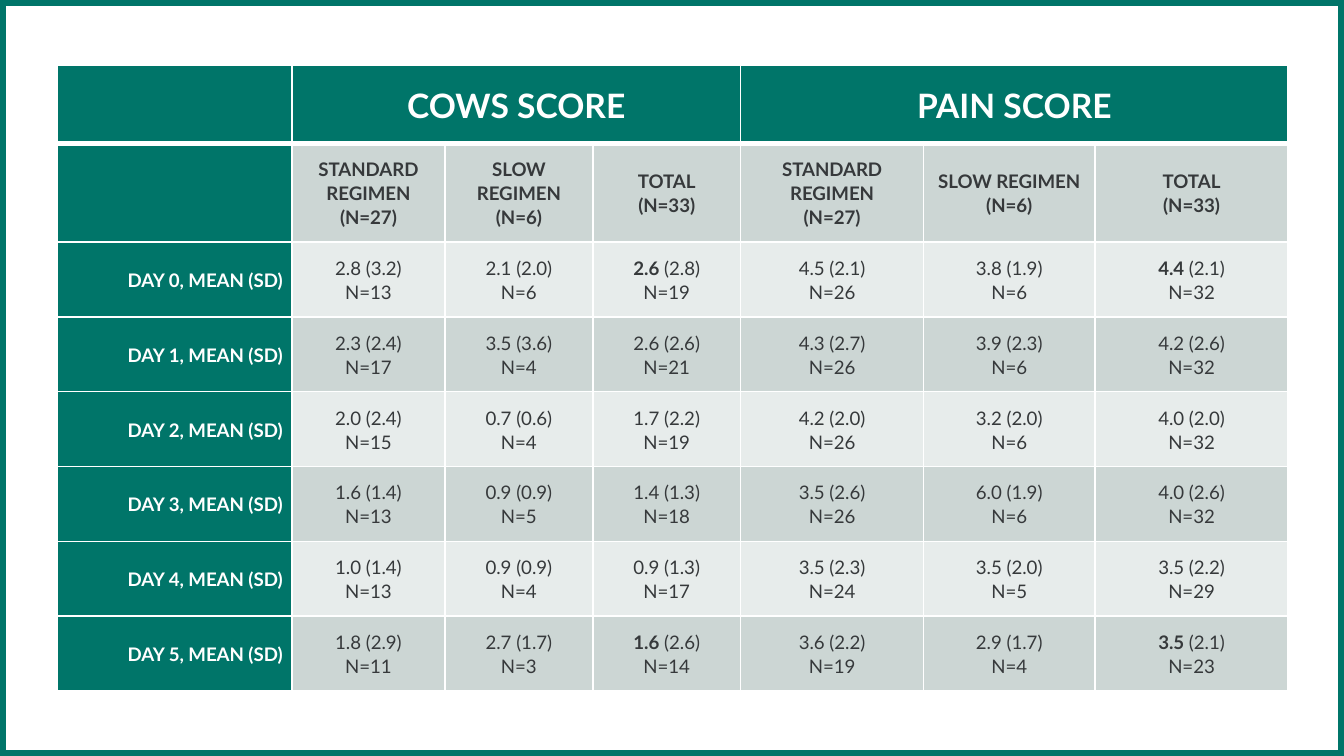
"""Build a slide with a table of COWS and pain scores by day and regimen."""
from dataclasses import dataclass

import pptx
import pptx.dml.color
import pptx.enum.shapes
import pptx.enum.text
import pptx.oxml
import pptx.oxml.ns
import pptx.util

Pt = pptx.util.Pt
ALIGN = pptx.enum.text.PP_ALIGN
GREEN, WHITE, INK = "007569", "FFFFFF", "36393B"
BANDS = ("CCD6D4", "E7ECEB")
COL_WIDTHS = (126, 82, 79.2, 79.2, 98, 91.8, 103.6)
ROW_HEIGHTS = (41.8, 52.9) + (40.1,) * 6
GROUPS = {1: "COWS SCORE", 4: "PAIN SCORE"}
REGIMENS = ("STANDARD REGIMEN\n(N=27)", "SLOW REGIMEN\n(N=6)", "TOTAL\n(N=33)")
BOLD_MEANS = {(0, 3), (0, 6), (5, 3), (5, 6)}
SCORES = (
    (("2.8 (3.2)", 13), ("2.1 (2.0)", 6), ("2.6 (2.8)", 19),
     ("4.5 (2.1)", 26), ("3.8 (1.9)", 6), ("4.4 (2.1)", 32)),
    (("2.3 (2.4)", 17), ("3.5 (3.6)", 4), ("2.6 (2.6)", 21),
     ("4.3 (2.7)", 26), ("3.9 (2.3)", 6), ("4.2 (2.6)", 32)),
    (("2.0 (2.4)", 15), ("0.7 (0.6)", 4), ("1.7 (2.2)", 19),
     ("4.2 (2.0)", 26), ("3.2 (2.0)", 6), ("4.0 (2.0)", 32)),
    (("1.6 (1.4)", 13), ("0.9 (0.9)", 5), ("1.4 (1.3)", 18),
     ("3.5 (2.6)", 26), ("6.0 (1.9)", 6), ("4.0 (2.6)", 32)),
    (("1.0 (1.4)", 13), ("0.9 (0.9)", 4), ("0.9 (1.3)", 17),
     ("3.5 (2.3)", 24), ("3.5 (2.0)", 5), ("3.5 (2.2)", 29)),
    (("1.8 (2.9)", 11), ("2.7 (1.7)", 3), ("1.6 (2.6)", 14),
     ("3.6 (2.2)", 19), ("2.9 (1.7)", 4), ("3.5 (2.1)", 23)),
)


@dataclass(frozen=True)
class CellStyle:
    size: float
    color: str
    bold: bool = True
    align: ALIGN = ALIGN.CENTER
    space: float = 0


GROUP = CellStyle(18, WHITE)
REGIMEN = CellStyle(10, INK, space=2)
DAY = CellStyle(10, WHITE, align=ALIGN.RIGHT, space=2)
SCORE = CellStyle(10, INK, bold=False)


def rgb(color: str) -> pptx.dml.color.RGBColor:
    return pptx.dml.color.RGBColor.from_string(color)


def set_borders(cell, row: int) -> None:
    tc_pr = cell._tc.get_or_add_tcPr()
    widths = {"L": 1, "R": 1, "T": 3 if row == 1 else 1, "B": 3 if row == 0 else 1}
    for i, (side, width) in enumerate(widths.items()):
        tc_pr.insert(i, pptx.oxml.parse_xml(
            f'<a:ln{side} {pptx.oxml.ns.nsdecls("a")} w="{Pt(width)}"><a:solidFill>'
            f'<a:srgbClr val="{WHITE}"/></a:solidFill></a:ln{side}>'))


def paint(cell, row: int, col: int) -> None:
    cell.fill.solid()
    cell.fill.fore_color.rgb = rgb(GREEN if row == 0 or col == 0 else BANDS[(row + 1) % 2])
    set_borders(cell, row)


def write(cell, lines: tuple[str, ...], style: CellStyle) -> None:
    cell.vertical_anchor = pptx.enum.text.MSO_ANCHOR.MIDDLE
    cell.margin_left = cell.margin_right = Pt(5)
    cell.margin_top = cell.margin_bottom = Pt(7.2)
    tf = cell.text_frame
    for i, line in enumerate(lines):
        p = tf.add_paragraph() if i else tf.paragraphs[0]
        p.text = line
        p.alignment = style.align
        p.line_spacing = 1.07
        p.space_before = p.space_after = Pt(style.space)
        p.font.name = "Lato"
        p.font.size = Pt(style.size)
        p.font.bold = style.bold
        p.font.color.rgb = rgb(style.color)


def embolden_mean(cell) -> None:
    p = cell.text_frame.paragraphs[0]
    mean, deviation = p.runs[0].text.split(" ")
    p.runs[0].text = mean
    p.runs[0].font.bold = True
    p.add_run().text = f" {deviation}"


def add_frame(s, width: int, height: int) -> None:
    sp = s.shapes.add_shape(pptx.enum.shapes.MSO_SHAPE.RECTANGLE, 0, 0, width, height)
    sp.shadow.inherit = False
    sp.fill.background()
    sp.line.color.rgb = rgb(GREEN)
    sp.line.width = Pt(6)


def add_score_table(s) -> None:
    table = s.shapes.add_table(
        len(ROW_HEIGHTS), len(COL_WIDTHS), Pt(30.4), Pt(35),
        Pt(sum(COL_WIDTHS)), Pt(sum(ROW_HEIGHTS))).table
    table.first_row = table.horz_banding = False
    for column, width in zip(table.columns, COL_WIDTHS):
        column.width = Pt(width)
    for i, height in enumerate(ROW_HEIGHTS):
        table.rows[i].height = Pt(height)
        for j in range(len(COL_WIDTHS)):
            paint(table.cell(i, j), i, j)
    for col, title in GROUPS.items():
        table.cell(0, col).merge(table.cell(0, col + 2))
        write(table.cell(0, col), (title,), GROUP)
    for col, label in enumerate(REGIMENS * len(GROUPS), 1):
        write(table.cell(1, col), (label,), REGIMEN)
    for day, scores in enumerate(SCORES):
        write(table.cell(day + 2, 0), (f"DAY {day}, MEAN (SD)",), DAY)
        for col, (score, n) in enumerate(scores, 1):
            cell = table.cell(day + 2, col)
            write(cell, (score, f"N={n}"), SCORE)
            if (day, col) in BOLD_MEANS:
                embolden_mean(cell)


def main() -> None:
    prs = pptx.Presentation()
    prs.slide_width, prs.slide_height = Pt(720), Pt(405)
    s = prs.slides.add_slide(prs.slide_layouts[6])
    add_frame(s, prs.slide_width, prs.slide_height)
    add_score_table(s)
    prs.save("out.pptx")


if __name__ == "__main__":
    main()
